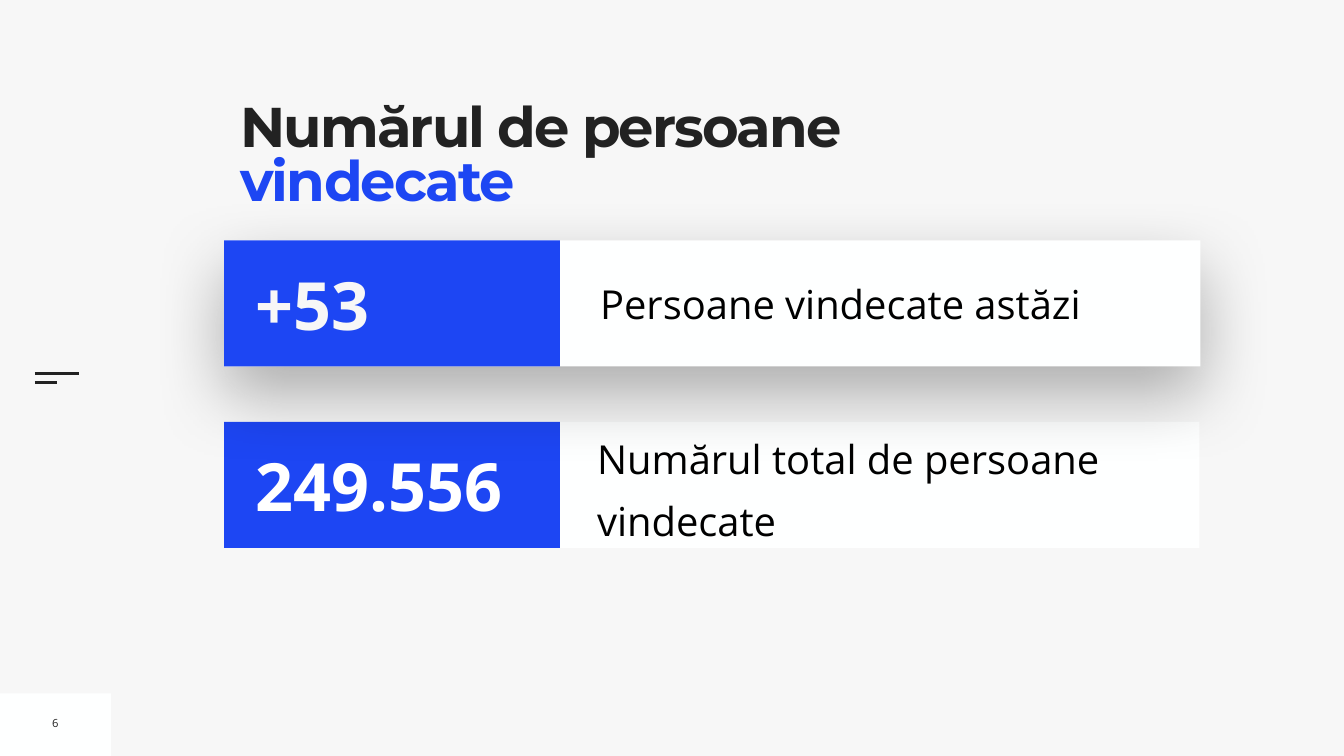
from lxml import etree
from pptx import Presentation
from pptx.dml.color import RGBColor
from pptx.enum.shapes import MSO_CONNECTOR, MSO_SHAPE
from pptx.enum.text import MSO_ANCHOR, PP_ALIGN
from pptx.oxml import parse_xml
from pptx.oxml.ns import nsdecls, qn
from pptx.util import Emu, Pt

RECTANGLE = MSO_SHAPE.RECTANGLE
STRAIGHT = MSO_CONNECTOR.STRAIGHT
TOP, MIDDLE = MSO_ANCHOR.TOP, MSO_ANCHOR.MIDDLE
LEFT, CENTER = PP_ALIGN.LEFT, PP_ALIGN.CENTER

EMU_PER_PX = 9144  # 100 px to the inch
COLORS = {
    "background": "F7F7F7",
    "panel": "FEFFFF",
    "accent": "1D46F3",
    "dark": "222222",
    "black": "000000",
    "white": "FFFFFF",
}
ROW_LEFT, ROW_HEIGHT, VALUE_WIDTH = 445, 250, 666


def px(length):
    return Emu(length * EMU_PER_PX)


def color(name):
    return RGBColor.from_string(COLORS[name])


def add_panel(shapes, left, top, width, height, fill):
    panel = shapes.add_shape(RECTANGLE, px(left), px(top), px(width), px(height))
    panel.shadow.inherit = False
    panel.fill.solid()
    panel.fill.fore_color.rgb = color(fill)
    panel.line.fill.background()
    return panel


def add_text(shapes, left, top, width, height, spans, *, size, font="Open Sans",
             bold=False, align=LEFT, anchor=MIDDLE, inset=10, wrap=True,
             line_spacing=None, space_before=0, tracking=None):
    """Add one paragraph made of (text, colour name) spans."""
    box = shapes.add_textbox(px(left), px(top), px(width), px(height))
    frame = box.text_frame
    frame.word_wrap = wrap
    frame.vertical_anchor = anchor
    frame.margin_left = frame.margin_right = px(inset)
    frame.margin_top = frame.margin_bottom = px(inset)
    para = frame.paragraphs[0]
    para.alignment = align
    para.space_before = Pt(space_before)
    para.line_spacing = line_spacing
    for text, color_name in spans:
        span = para.add_run()
        span.text = text
        span.font.name = font
        span.font.size = Pt(size)
        span.font.bold = bold
        span.font.color.rgb = color(color_name)
        if tracking is not None:
            span.font._element.set("spc", str(round(tracking * 100)))


def add_rule(shapes, left, top, length):
    rule = shapes.add_connector(STRAIGHT, px(left), px(top), px(left + length), px(top))
    rule.line.color.rgb = color("dark")
    rule.line.width = Pt(3)
    etree.SubElement(rule._element.spPr, qn("a:effectLst"))


def add_soft_shadow(panel):
    properties = panel._element.spPr
    properties.remove(properties.find(qn("a:effectLst")))
    properties.append(parse_xml(
        f'<a:effectLst {nsdecls("a")}>'
        f'<a:outerShdw blurRad="{Pt(100)}" dist="{Pt(40)}" dir="5400000" rotWithShape="0">'
        f'<a:srgbClr val="{COLORS["black"]}"><a:alpha val="30000"/></a:srgbClr>'
        '</a:outerShdw></a:effectLst>'))


def add_statistic(page, top, width, value, value_color, label, label_box,
                  shadow=False, **label_format):
    """Add a row with a value on blue and its label on white."""
    shapes = page.shapes.add_group_shape().shapes
    panel = add_panel(shapes, ROW_LEFT, top, width, ROW_HEIGHT, "panel")
    if shadow:
        add_soft_shadow(panel)
    add_text(shapes, *label_box, [(label, "black")], size=57, **label_format)
    add_panel(shapes, ROW_LEFT, top, VALUE_WIDTH, ROW_HEIGHT, "accent")
    add_text(shapes, ROW_LEFT + 53, top + 35, 603, 180, [(value, value_color)],
             size=95, bold=True)


def main():
    deck = Presentation()
    deck.slide_width, deck.slide_height = px(2667), px(1500)
    page = deck.slides.add_slide(deck.slide_layouts[6])
    page.background.fill.solid()
    page.background.fill.fore_color.rgb = color("background")

    add_panel(page.shapes, 0, 1376, 220, 124, "panel")
    add_rule(page.shapes, 69, 741, 88)
    add_rule(page.shapes, 69, 759, 44)
    add_text(page.shapes, 477, 207, 1301, 273,
             [("Numărul de persoane ", "dark"), ("vindecate", "accent")],
             size=80, font="Montserrat", bold=True, anchor=TOP, inset=0,
             line_spacing=0.8, tracking=-2.7)
    add_text(page.shapes, 93, 1409, 34, 51, [("6", "dark")], size=16,
             align=CENTER, wrap=False)

    # The upper row comes last so that its shadow falls on the lower one.
    add_statistic(page, 837, 1935, "249.556", "white",
                  "Numărul total de persoane vindecate", (1185, 839, 1195, 236),
                  inset=0, line_spacing=1.3, space_before=20)
    add_statistic(page, 477, 1937, "+53", "background",
                  "Persoane vindecate astăzi", (1181, 544, 1176, 116), shadow=True)

    deck.save("out.pptx")


if __name__ == "__main__":
    main()
